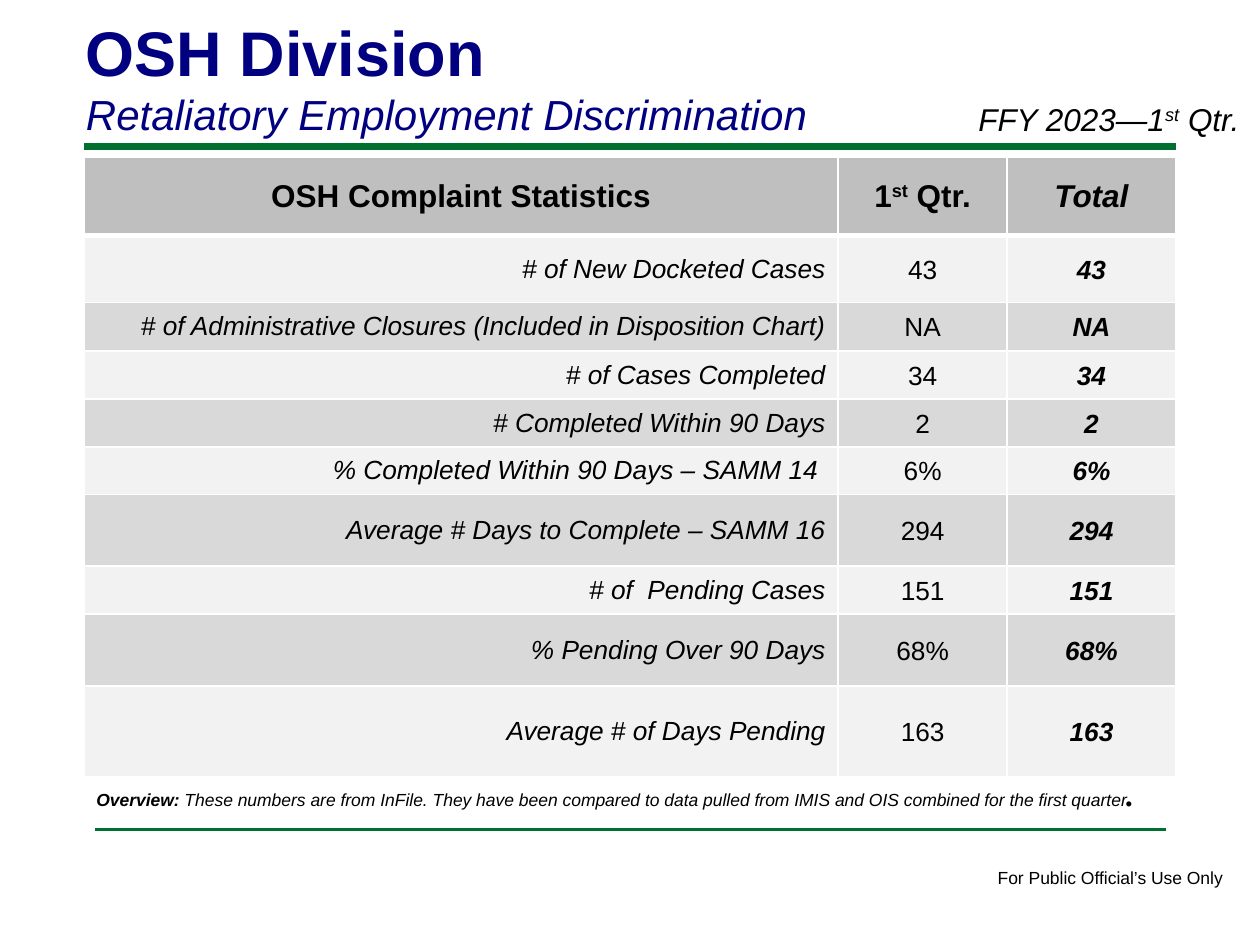
import pptx
import pptx.util
import pptx.dml.color
import pptx.enum.shapes
import pptx.enum.text
import pptx.oxml
import pptx.oxml.ns

Pt = pptx.util.Pt
ALIGN = pptx.enum.text.PP_ALIGN
COLORS = {"green": "007030", "navy": "000080", "black": "000000", "white": "FFFFFF",
          "header": "BFBFBF", "light": "F2F2F2", "dark": "D9D9D9"}
HEADER = [["OSH Complaint Statistics"], ["1", ("st", {"base": 30}), " Qtr."], ["Total"]]
ROWS = [  # label, value for the quarter and in total, row height
    ("# of New Docketed Cases", "43", 38.5),
    ("# of Administrative Closures (Included in Disposition Chart)", "NA", 27.5),
    ("# of Cases Completed", "34", 27.5),
    ("# Completed Within 90 Days", "2", 27.5),
    ("% Completed Within 90 Days – SAMM 14 ", "6%", 27),
    ("Average # Days to Complete – SAMM 16", "294", 41),
    ("# of  Pending Cases", "151", 27.5),
    ("% Pending Over 90 Days", "68%", 41),
    ("Average # of Days Pending", "163", 52),
]


def rgb(name):
    return pptx.dml.color.RGBColor.from_string(COLORS[name])


def add_runs(p, parts, **base):
    """Fill a paragraph with strings or (string, format changes) pairs."""
    for part in parts:
        text, changes = (part, {}) if isinstance(part, str) else part
        values = {"name": "Arial", "size": 18, "bold": False, "italic": False,
                  "color": "black", **base, **changes}
        r = p.add_run()
        r.text = text
        r.font.color.rgb = rgb(values.pop("color"))
        shift = values.pop("base", None)
        values["size"] = Pt(values["size"])
        for key, value in values.items():
            setattr(r.font, key, value)
        if shift:
            r.font._element.set("baseline", str(shift * 1000))


def add_text(s, box, paragraphs, wrap=True):
    tf = s.shapes.add_textbox(*map(Pt, box)).text_frame
    tf.word_wrap = wrap
    for i, (parts, values) in enumerate(paragraphs):
        p = tf.add_paragraph() if i else tf.paragraphs[0]
        add_runs(p, parts, **values)


def add_rule(s, x, y, width, weight):
    line = s.shapes.add_connector(pptx.enum.shapes.MSO_CONNECTOR.STRAIGHT,
                                  Pt(x), Pt(y), Pt(x + width), Pt(y))
    line.line.color.rgb = rgb("green")
    line.line.width = Pt(weight)
    line._element.spPr.append(pptx.oxml.parse_xml(
        f'<a:effectLst {pptx.oxml.ns.nsdecls("a")}/>'))


def set_borders(cell, **widths):
    tcPr = cell._tc.get_or_add_tcPr()
    for side in "LRTB":
        tcPr.append(pptx.oxml.parse_xml(
            f'<a:ln{side} {pptx.oxml.ns.nsdecls("a")} w="{Pt(widths.get(side, 1))}">'
            f'<a:solidFill><a:srgbClr val="{COLORS["white"]}"/></a:solidFill></a:ln{side}>'))


def fill_cell(cell, parts, fill, align, borders, **values):
    set_borders(cell, **borders)
    cell.fill.solid()
    cell.fill.fore_color.rgb = rgb(fill)
    cell.vertical_anchor = pptx.enum.text.MSO_ANCHOR.MIDDLE
    p = cell.text_frame.paragraphs[0]
    p.alignment = align
    add_runs(p, parts, **values)


def heading(s, x, y, width):
    add_text(s, (x, y, width - 30, 80), [
        (["OSH Division"], {"size": 36, "bold": True, "color": "navy"}),
        (["Retaliatory Employment Discrimination"],
         {"size": 24, "italic": True, "color": "navy"})])
    add_text(s, (x + width - 114, y + 49.5, 180, 29),
             [(["FFY 2023—1", ("st", {"base": 30}), " Qtr."], {"italic": True})])
    add_rule(s, x + 6, y + 80, width, 4)


def statistics_table(s, x, y, width):
    heights = [44.5] + [row[2] for row in ROWS]
    table = s.shapes.add_table(len(heights), 3, Pt(x), Pt(y),
                               Pt(width), Pt(sum(heights))).table
    for column, size in zip(table.columns, (width - 193, 96.5, 96.5)):
        column.width = Pt(size)
    for row, size in zip(table.rows, heights):
        row.height = Pt(size)
    # Header row
    for i, parts in enumerate(HEADER):
        fill_cell(table.cell(0, i), parts, "header", ALIGN.CENTER, {"B": 3},
                  bold=True, italic=i == 2)
    # Banded body rows
    for n, (label, value, _) in enumerate(ROWS, 1):
        fill = "light" if n % 2 else "dark"
        borders = {"T": 3} if n == 1 else {}
        for i, text in enumerate((label, value, value)):
            cell = table.cell(n, i)
            fill_cell(cell, [text], fill, ALIGN.CENTER if i else ALIGN.RIGHT, borders,
                      size=15, bold=i == 2, italic=i != 1)
            if i:
                cell.text_frame.paragraphs[0].line_spacing = 1.07


def footer(s, x, y, width):
    add_text(s, (x, y, width, 29), [([
        ("Overview: ", {"bold": True}),
        "These numbers are from InFile. They have been compared to data pulled "
        "from IMIS and OIS combined for the first quarter",
        (".", {"name": "Times New Roman", "size": 18, "bold": True}),
    ], {"size": 10, "italic": True})], wrap=False)
    add_rule(s, x + 6, y + 34.5, width - 8, 2)
    add_text(s, (x + 515, y + 52.5, 145, 19.5),
             [(["For Public Official’s Use Only"], {"size": 10})], wrap=False)


def main():
    prs = pptx.Presentation()
    prs.slide_width, prs.slide_height = Pt(720), Pt(540)
    s = prs.slides.add_slide(prs.slide_layouts[6])
    heading(s, 42, 4, 624)
    statistics_table(s, 48, 90, 624)
    footer(s, 48, 439.5, 620)
    prs.save("out.pptx")


if __name__ == "__main__":
    main()
